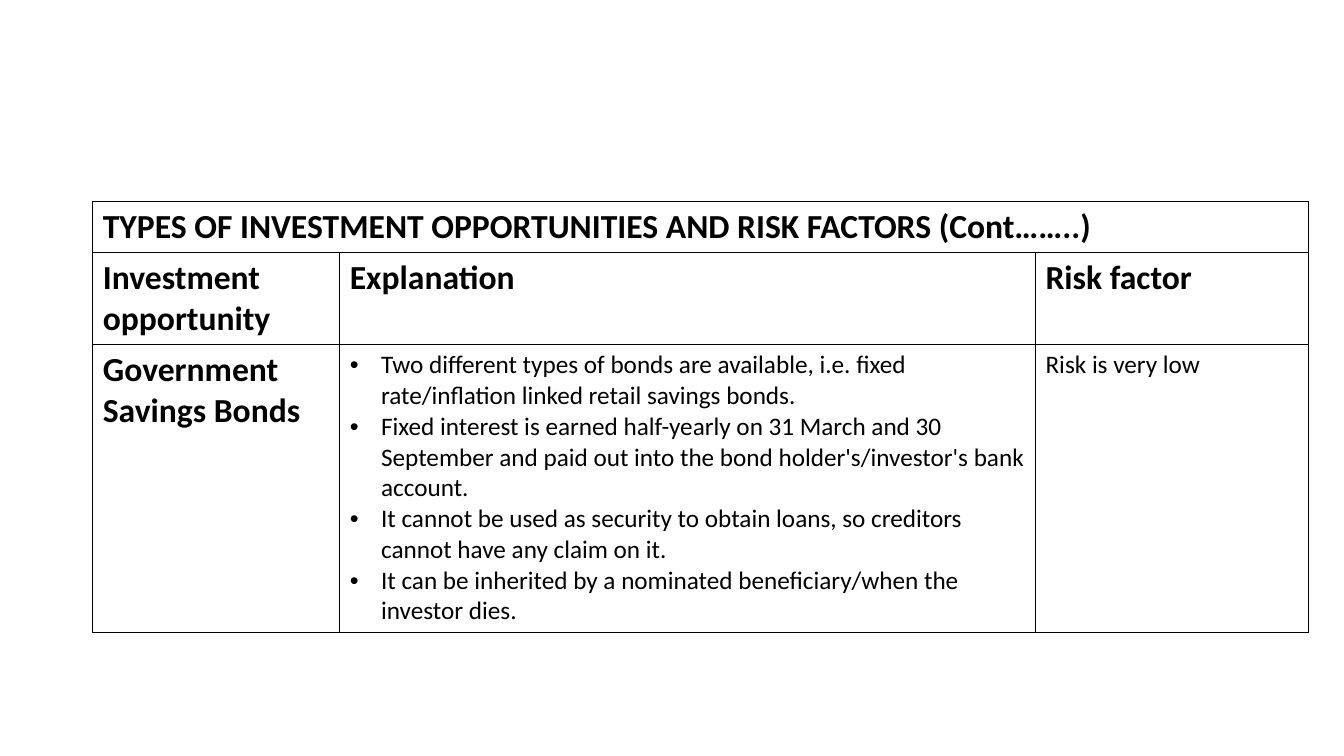
"""Build a slide with a table of investment opportunities and risk factors."""
from lxml.etree import SubElement
from pptx import Presentation
from pptx.dml.color import RGBColor
from pptx.oxml.ns import qn
from pptx.util import Inches, Pt


def color(hex_value):
    return RGBColor.from_string(hex_value)


class SlideBuilder:
    font_name = "Calibri"
    ink = "000000"
    paper = "FFFFFF"
    border_width = Pt(1)
    bullet_indent = Inches(0.31)

    def __init__(self, slide):
        self.slide = slide

    def table(self, left, top, widths, heights):
        frame = self.slide.shapes.add_table(
            len(heights), len(widths), Inches(left), Inches(top),
            Inches(sum(widths)), Inches(sum(heights)))
        table = frame.table
        table.first_row = table.horz_banding = False
        for column, width in zip(table.columns, widths):
            column.width = Inches(width)
        for row, height in zip(table.rows, heights):
            row.height = Inches(height)
        for cell in table.iter_cells():
            self.borders(cell)
            cell.fill.solid()
            cell.fill.fore_color.rgb = color(self.paper)
        return table

    def borders(self, cell):
        properties = cell._tc.get_or_add_tcPr()
        for side in ("lnL", "lnR", "lnT", "lnB"):
            line = SubElement(properties, qn(f"a:{side}"), w=str(self.border_width))
            fill = SubElement(line, qn("a:solidFill"))
            SubElement(fill, qn("a:srgbClr"), val=self.ink)

    def text(self, cell, lines, size, bold=False, bulleted=False):
        cell.text = "\n".join(lines)
        for paragraph in cell.text_frame.paragraphs:
            if bulleted:
                self.bullet(paragraph)
            font = paragraph.font
            font.name = self.font_name
            font.size = Pt(size)
            font.bold = bold
            font.color.rgb = color(self.ink)

    def bullet(self, paragraph):
        properties = paragraph._p.get_or_add_pPr()
        properties.set("marL", str(self.bullet_indent))
        properties.set("indent", str(-self.bullet_indent))
        SubElement(properties, qn("a:buFont"), typeface="Arial")
        SubElement(properties, qn("a:buChar"), char="•")


def main():
    presentation = Presentation()
    presentation.slide_width = Inches(13.33)
    presentation.slide_height = Inches(7.5)
    builder = SlideBuilder(presentation.slides.add_slide(presentation.slide_layouts[6]))

    table = builder.table(0.92, 2, [2.45, 6.9, 2.71], [0.5, 0.91, 2.85])
    table.cell(0, 0).merge(table.cell(0, 2))
    headings = {
        (0, 0): "TYPES OF INVESTMENT OPPORTUNITIES AND RISK FACTORS (Cont……..)",
        (1, 0): "Investment opportunity",
        (1, 1): "Explanation",
        (1, 2): "Risk factor",
        (2, 0): "Government Savings Bonds",
    }
    for (row, column), heading in headings.items():
        builder.text(table.cell(row, column), [heading], 24, bold=True)

    explanations = [
        "Two different types of bonds are available, i.e. fixed rate/inflation linked "
        "retail savings bonds.",
        "Fixed interest is earned half-yearly on 31 March and 30 September and paid out "
        "into the bond holder's/investor's bank account.",
        "It cannot be used as security to obtain loans, so creditors cannot have any "
        "claim on it.",
        "It can be inherited by a nominated beneficiary/when the investor dies.",
    ]
    builder.text(table.cell(2, 1), explanations, 18, bulleted=True)
    builder.text(table.cell(2, 2), ["Risk is very low"], 18)

    presentation.save("out.pptx")


if __name__ == "__main__":
    main()
